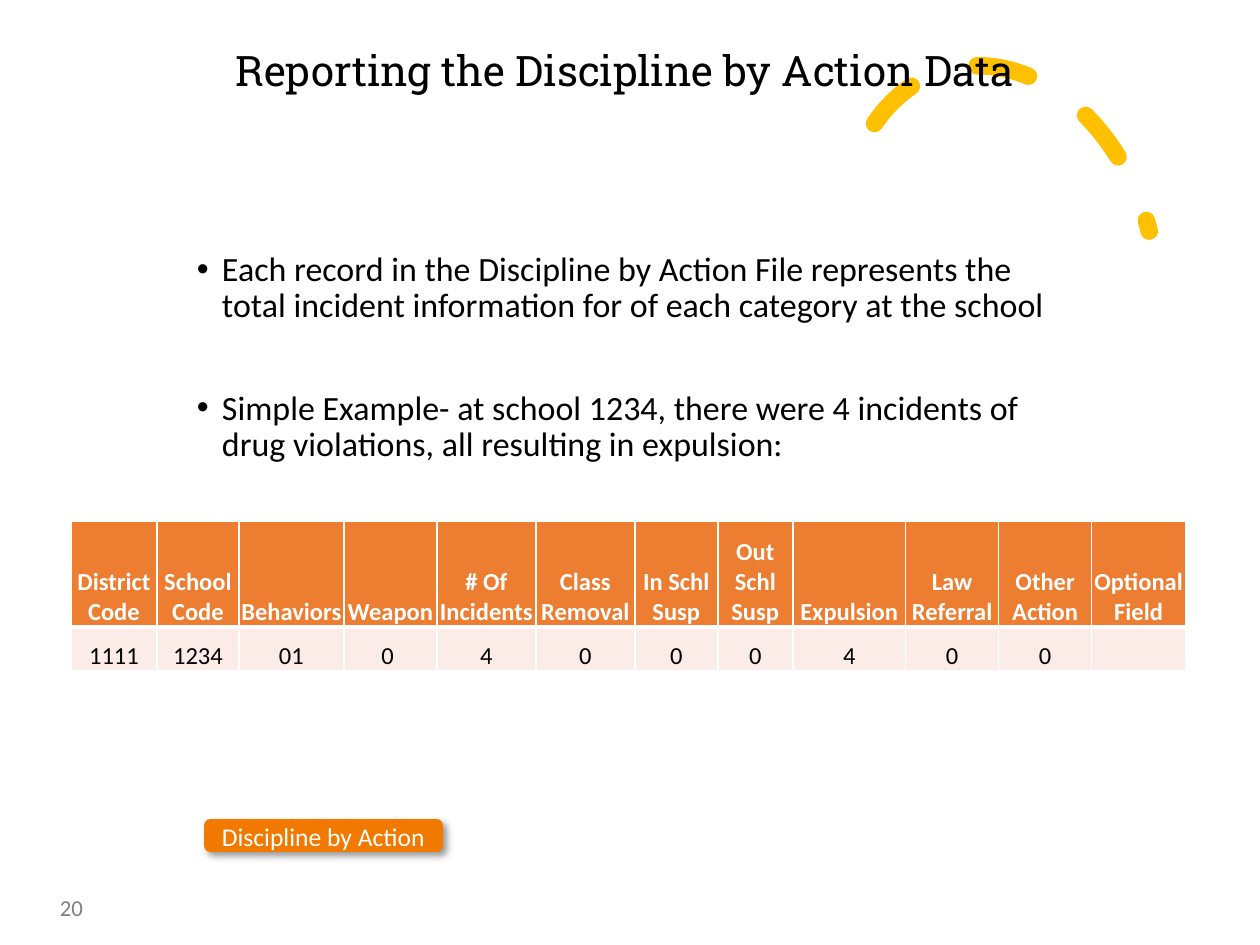
from dataclasses import dataclass

from lxml import etree
from pptx import Presentation
from pptx.dml.color import RGBColor
from pptx.enum import dml, shapes, text
from pptx.oxml import parse_xml
from pptx.oxml.ns import nsdecls, qn
from pptx.util import Pt

EMU_PER_PX = 914400 / 126


@dataclass(frozen=True)
class Theme:
    title_font: str = "Roboto Slab"
    body_font: str = "Calibri"
    black: str = "000000"
    white: str = "FFFFFF"
    gray: str = "808080"
    arc: str = "FFC000"
    header: str = "ED7D31"
    row: str = "FCECE8"
    badge: str = "F27900"
    title_size: float = 24
    body_size: float = 19.4
    table_size: float = 14
    badge_size: float = 14.6
    number_size: float = 13


THEME = Theme()

TITLE = "Reporting the Discipline by Action Data "
BULLETS = [
    "Each record in the Discipline by Action File represents the total "
    "incident information for of each category at the school",
    "Simple Example- at school 1234, there were 4 incidents of drug "
    "violations, all resulting in expulsion:",
]
# Heading, value and width of each table column
COLUMNS = [
    ("District Code", "1111", 86),
    ("School Code", "1234", 82),
    ("Behaviors", "01", 105),
    ("Weapon", "0 ", 93),
    ("# Of Incidents", "4", 99),
    ("Class Removal", "0", 99),
    ("In Schl Susp", "0", 83),
    ("Out Schl Susp", "0", 75),
    ("Expulsion", "4", 113),
    ("Law Referral", "0", 93),
    ("Other Action", "0", 93),
    ("Optional Field", "", 94),
]


def px(length):
    return round(length * EMU_PER_PX)


def color(value):
    return RGBColor.from_string(value)


def place(shape, left, top, width, height):
    shape.left, shape.top = px(left), px(top)
    shape.width, shape.height = px(width), px(height)


def set_frame(frame, anchor, margins):
    frame.word_wrap = True
    frame.auto_size = text.MSO_AUTO_SIZE.NONE
    frame.vertical_anchor = anchor
    (frame.margin_left, frame.margin_top,
     frame.margin_right, frame.margin_bottom) = map(px, margins)


def add_span(para, words, size, ink, font=THEME.body_font, bold=False):
    span = para.add_run()
    span.text = words
    span.font.name = font
    span.font.size = Pt(size)
    span.font.bold = bold
    span.font.color.rgb = color(ink)


def add_arc(page):
    arc = page.shapes.add_shape(shapes.MSO_SHAPE.ARC, px(845), px(63), px(309), px(412))
    arc.adjustments[0] = 146.13
    arc.adjustments[1] = 0
    arc.rotation = 345.8
    arc.shadow.inherit = False
    arc.fill.background()
    arc.line.color.rgb = color(THEME.arc)
    arc.line.width = Pt(10)
    arc.line.dash_style = dml.MSO_LINE.DASH
    arc.line._get_or_add_ln().set("cap", "rnd")
    # The arc lies behind the title
    page.shapes.title.element.addprevious(arc.element)


def fill_title(page):
    title = page.shapes.title
    place(title, 87, 50, 1086, 183)
    set_frame(title.text_frame, text.MSO_ANCHOR.TOP, (0, 0, 0, 0))
    para = title.text_frame.paragraphs[0]
    para.alignment = text.PP_ALIGN.CENTER
    para.line_spacing = 0.9
    add_span(para, TITLE, THEME.title_size, THEME.black, THEME.title_font)


def fill_bullets(page):
    body = page.placeholders[1]
    place(body, 197, 252, 887, 522)
    frame = body.text_frame
    set_frame(frame, text.MSO_ANCHOR.TOP, (0, 0, 0, 6))
    for index, words in enumerate(BULLETS):
        para = frame.add_paragraph() if index else frame.paragraphs[0]
        props = para._p.get_or_add_pPr()
        props.set("marL", str(px(25)))
        props.set("indent", str(-px(25)))
        etree.SubElement(props, qn("a:buChar")).set("char", "•")
        para.line_spacing = 0.9
        para.space_before = Pt(37.5 if index else 0)
        add_span(para, words, THEME.body_size, THEME.black)


def set_borders(cell, bottom):
    props = cell._tc.get_or_add_tcPr()
    widths = {"lnL": 1, "lnR": 1, "lnT": 1, "lnB": bottom}
    for index, (side, width) in enumerate(widths.items()):
        props.insert(index, parse_xml(
            f'<a:{side} {nsdecls("a")} w="{Pt(width)}"><a:solidFill>'
            f'<a:srgbClr val="{THEME.white}"/></a:solidFill></a:{side}>'))


def fill_cell(cell, words, fill, ink, bold, bottom):
    cell.fill.solid()
    cell.fill.fore_color.rgb = color(fill)
    cell.vertical_anchor = text.MSO_ANCHOR.BOTTOM
    cell.margin_left = cell.margin_right = cell.margin_top = px(1)
    cell.margin_bottom = 0
    set_borders(cell, bottom)
    para = cell.text_frame.paragraphs[0]
    para.alignment = text.PP_ALIGN.CENTER
    if words:
        add_span(para, words, THEME.table_size, ink, bold=bold)
    else:
        para.font.size = Pt(THEME.table_size)


def add_data_table(page):
    width = sum(column[2] for column in COLUMNS)
    table = page.shapes.add_table(
        2, len(COLUMNS), px(71), px(521), px(width), px(150)).table
    table.horz_banding = False
    table.rows[0].height, table.rows[1].height = px(106), px(44)
    for index, (heading, value, column_width) in enumerate(COLUMNS):
        table.columns[index].width = px(column_width)
        fill_cell(table.cell(0, index), heading, THEME.header, THEME.white, True, 3)
        fill_cell(table.cell(1, index), value, THEME.row, THEME.black, False, 1)


def add_badge(page, words):
    badge = page.shapes.add_shape(
        shapes.MSO_SHAPE.ROUNDED_RECTANGLE, px(205), px(820), px(237), px(31))
    badge.fill.solid()
    badge.fill.fore_color.rgb = color(THEME.badge)
    badge.line.color.rgb = color(THEME.badge)
    badge.line.width = Pt(1)
    badge.shadow.inherit = False
    # Soft shadow to the lower right
    effects = badge.element.spPr.find(qn("a:effectLst"))
    effects.append(parse_xml(
        f'<a:outerShdw {nsdecls("a")} blurRad="{Pt(4)}" dist="{Pt(3)}" '
        f'dir="2700000" algn="tl" rotWithShape="0"><a:srgbClr val="{THEME.black}">'
        '<a:alpha val="40000"/></a:srgbClr></a:outerShdw>'))
    set_frame(badge.text_frame, text.MSO_ANCHOR.MIDDLE, (13, 2, 13, 0))
    para = badge.text_frame.paragraphs[0]
    para.alignment = text.PP_ALIGN.CENTER
    add_span(para, words, THEME.badge_size, THEME.white)


def add_page_number(page, number):
    box = page.shapes.add_textbox(px(47), px(888), px(232), px(42))
    set_frame(box.text_frame, text.MSO_ANCHOR.TOP, (13, 6, 13, 6))
    add_span(box.text_frame.paragraphs[0], number, THEME.number_size, THEME.gray)


def main():
    deck = Presentation()
    deck.slide_width, deck.slide_height = px(1260), px(945)
    page = deck.slides.add_slide(deck.slide_layouts[1])
    add_arc(page)
    fill_title(page)
    fill_bullets(page)
    add_page_number(page, "20")
    add_data_table(page)
    add_badge(page, "Discipline by Action")
    deck.save("out.pptx")


if __name__ == "__main__":
    main()
